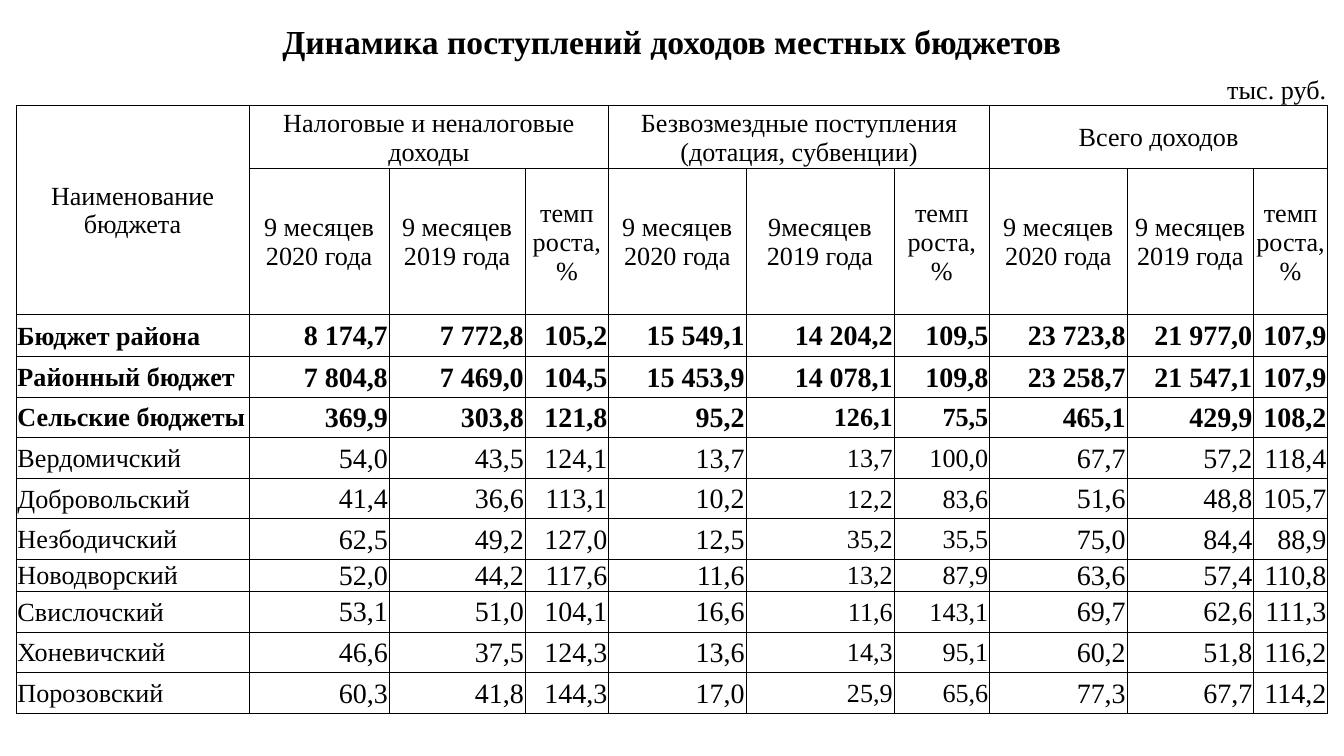
import pptx
import pptx.util
import pptx.dml.color
import pptx.enum.text
import pptx.oxml
import pptx.oxml.ns

Inches, Pt = pptx.util.Inches, pptx.util.Pt
ALIGN, ANCHOR = pptx.enum.text.PP_ALIGN, pptx.enum.text.MSO_ANCHOR

TITLE = "Динамика поступлений доходов местных бюджетов"
UNITS = "тыс. руб."
NAME_HEADER = "Наименование бюджета"
GROUPS = [  # first column, column count, heading
    (1, 4, "Налоговые и неналоговые доходы"),
    (5, 4, "Безвозмездные поступления (дотация, субвенции)"),
    (9, 5, "Всего доходов"),
]
GROWTH = "темп\nроста, %"
YEAR_2020, YEAR_2019 = "9 месяцев\n2020 года", "9 месяцев\n2019 года"
HEADERS = [
    YEAR_2020, YEAR_2019, GROWTH,
    "9 месяцев 2020 года", "9месяцев\n2019 года", GROWTH,
    YEAR_2020, YEAR_2019, GROWTH,
]
BUDGETS = [
    ("Бюджет района", "8 174,7", "7 772,8", "105,2", "15 549,1", "14 204,2", "109,5", "23 723,8", "21 977,0", "107,9"),
    ("Районный бюджет", "7 804,8", "7 469,0", "104,5", "15 453,9", "14 078,1", "109,8", "23 258,7", "21 547,1", "107,9"),
    ("Сельские бюджеты", "369,9", "303,8", "121,8", "95,2", "126,1", "75,5", "465,1", "429,9", "108,2"),
    ("Вердомичский", "54,0", "43,5", "124,1", "13,7", "13,7", "100,0", "67,7", "57,2", "118,4"),
    ("Добровольский", "41,4", "36,6", "113,1", "10,2", "12,2", "83,6", "51,6", "48,8", "105,7"),
    ("Незбодичский", "62,5", "49,2", "127,0", "12,5", "35,2", "35,5", "75,0", "84,4", "88,9"),
    ("Новодворский", "52,0", "44,2", "117,6", "11,6", "13,2", "87,9", "63,6", "57,4", "110,8"),
    ("Свислочский", "53,1", "51,0", "104,1", "16,6", "11,6", "143,1", "69,7", "62,6", "111,3"),
    ("Хоневичский", "46,6", "37,5", "124,3", "13,6", "14,3", "95,1", "60,2", "51,8", "116,2"),
    ("Порозовский", "60,3", "41,8", "144,3", "17,0", "25,9", "65,6", "77,3", "67,7", "114,2"),
]
TOTAL_ROWS = 3
COLORS = {"text": "000000", "border": "000000"}
FONT = "Times New Roman"

TABLE_WIDTH, TABLE_HEIGHT = 9.76, 5.07
# Relative sizes, stretched to the table's width and height
COL_WIDTHS = [1.73, 1.04, 0.74, 0.27, 0.62, 0.89, 0.13, 1.1, 0.71, 0.73, 0.29, 0.6, 0.34, 0.55]
ROW_HEIGHTS = [0.32, 0.32, 0.47, 1.08, 0.31] + [0.3] * 5 + [0.14] + [0.3] * 3
FIELD_SPANS = [(0, 1), (1, 1), (2, 2), (4, 1), (5, 2), (7, 1), (8, 1), (9, 2), (11, 2), (13, 1)]
UNIT_ROW_SPANS = [(1, 2), (3, 3), (6, 3), (10, 2), (12, 2)]
SMALL_FIELDS = (5, 6)  # set in 14 pt from the third budget on


def stretch(parts, total):
    return [Inches(part * total / sum(parts)) for part in parts]


def set_borders(cell, visible_sides):
    """Draw the given sides (letters of LRTB) and clear the others."""
    tcPr = cell._tc.get_or_add_tcPr()
    for i, side in enumerate("LRTB"):
        if side in visible_sides:
            paint = f'<a:solidFill><a:srgbClr val="{COLORS["border"]}"/></a:solidFill>'
        else:
            paint = "<a:noFill/>"
        xml = f'<a:ln{side} {pptx.oxml.ns.nsdecls("a")} w="{Pt(0.5)}">{paint}</a:ln{side}>'
        tcPr.insert(i, pptx.oxml.parse_xml(xml))


def merge(table, row, col, n_rows, n_cols):
    cell = table.cell(row, col)
    if n_rows * n_cols > 1:
        cell.merge(table.cell(row + n_rows - 1, col + n_cols - 1))
    return cell


def write(cell, text, size=14, bold=False, align=ALIGN.CENTER, anchor=ANCHOR.MIDDLE):
    cell.text_frame.text = text
    cell.vertical_anchor = anchor
    for p in cell.text_frame.paragraphs:
        p.alignment = align
        for r in p.runs:
            r.font.name, r.font.size, r.font.bold = FONT, Pt(size), bold
            r.font.color.rgb = pptx.dml.color.RGBColor.from_string(COLORS["text"])


def add_budget_table(s):
    table = s.shapes.add_table(
        len(ROW_HEIGHTS), len(COL_WIDTHS), Inches(0.12), Inches(0.14),
        Inches(TABLE_WIDTH), Inches(TABLE_HEIGHT)).table
    table.first_row = table.horz_banding = False
    for column, width in zip(table.columns, stretch(COL_WIDTHS, TABLE_WIDTH)):
        column.width = width
    for i, (row, height) in enumerate(zip(table.rows, stretch(ROW_HEIGHTS, TABLE_HEIGHT))):
        row.height = height
        for cell in row.cells:
            cell.margin_left = cell.margin_right = cell.margin_top = Inches(0.01)
            cell.margin_bottom = 0
            cell.fill.background()
            set_borders(cell, ("", "B")[i] if i < 2 else "LRTB")
    return table


def fill_headings(table):
    write(merge(table, 0, 0, 1, len(COL_WIDTHS)), TITLE, 18, True, anchor=ANCHOR.BOTTOM)
    for col, n_cols in UNIT_ROW_SPANS:
        unit_cell = merge(table, 1, col, 1, n_cols)
    write(unit_cell, UNITS, align=ALIGN.RIGHT, anchor=ANCHOR.BOTTOM)
    write(merge(table, 2, 0, 2, 1), NAME_HEADER)
    for col, n_cols, text in GROUPS:
        write(merge(table, 2, col, 1, n_cols), text)
    for (col, n_cols), text in zip(FIELD_SPANS[1:], HEADERS):
        write(merge(table, 3, col, 1, n_cols), text)


def fill_budgets(table):
    for i, budget in enumerate(BUDGETS):
        for field, ((col, n_cols), text) in enumerate(zip(FIELD_SPANS, budget)):
            small = field == 0 or (field in SMALL_FIELDS and i >= TOTAL_ROWS - 1)
            write(merge(table, 4 + i, col, 1, n_cols), text,
                  size=14 if small else 15, bold=i < TOTAL_ROWS,
                  align=ALIGN.RIGHT if field else ALIGN.LEFT)


def main():
    prs = pptx.Presentation()
    prs.slide_width = Inches(10)
    prs.slide_height = prs.slide_width * 9 // 16
    s = prs.slides.add_slide(prs.slide_layouts[6])
    table = add_budget_table(s)
    fill_headings(table)
    fill_budgets(table)
    prs.save("out.pptx")


if __name__ == "__main__":
    main()
